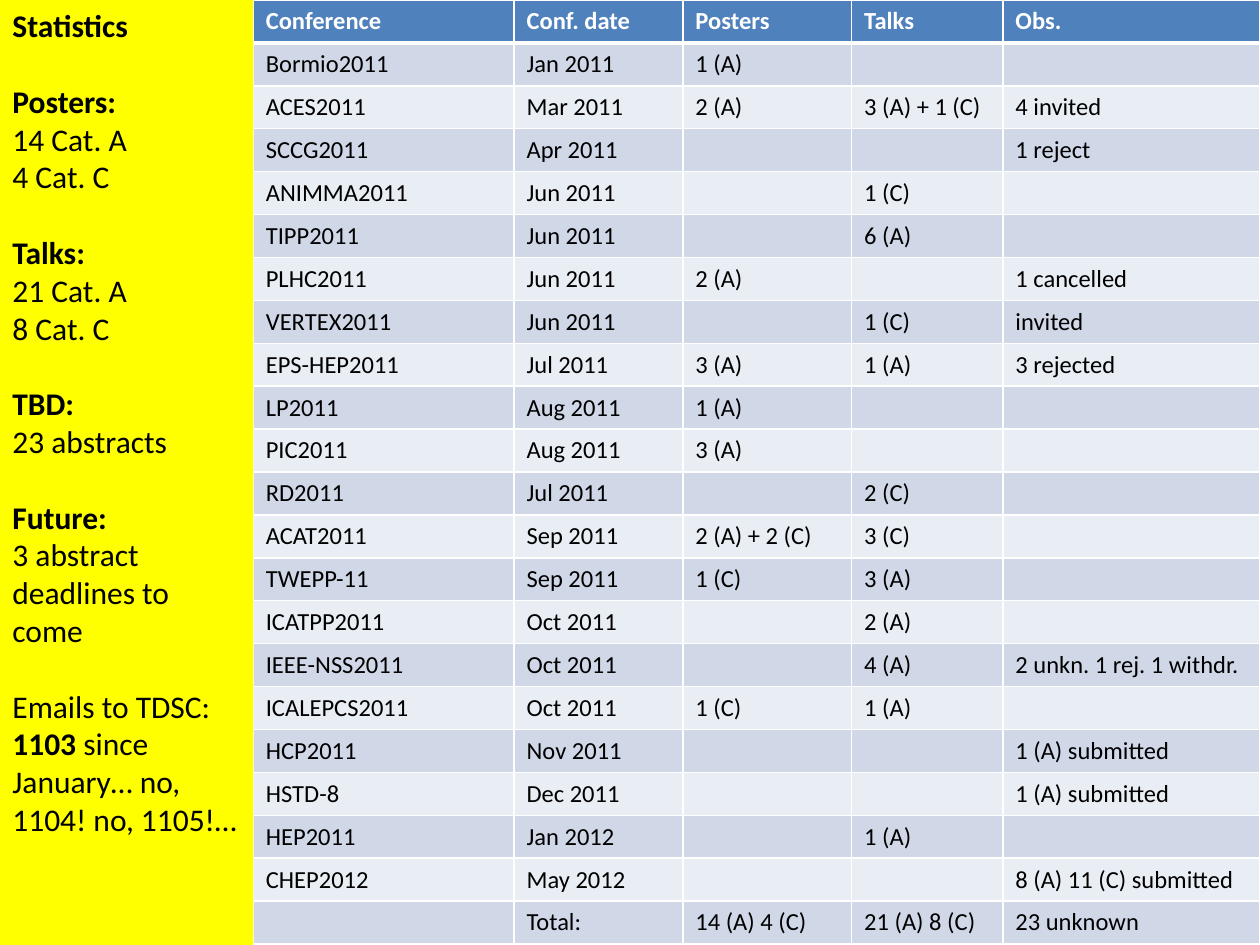
import pptx
import pptx.util
import pptx.dml.color
import pptx.enum.shapes
import pptx.enum.text
import pptx.oxml.ns
from lxml import etree

Inches = pptx.util.Inches
Pt = pptx.util.Pt

SIDEBAR_WIDTH = 2.01
COLUMN_WIDTHS = [2.07, 1.34, 1.34, 1.2, 2.04]
HEADER = ("Conference", "Conf. date", "Posters", "Talks", "Obs.")
CONFERENCES = [
    ("Bormio2011", "Jan 2011", "1 (A)", "", ""),
    ("ACES2011", "Mar 2011", "2 (A)", "3 (A) + 1 (C)", "4 invited"),
    ("SCCG2011", "Apr 2011", "", "", "1 reject"),
    ("ANIMMA2011", "Jun 2011", "", "1 (C)", ""),
    ("TIPP2011", "Jun 2011", "", "6 (A)", ""),
    ("PLHC2011", "Jun 2011", "2 (A)", "", "1 cancelled"),
    ("VERTEX2011", "Jun 2011", "", "1 (C)", "invited"),
    ("EPS-HEP2011", "Jul 2011", "3 (A)", "1 (A)", "3 rejected"),
    ("LP2011", "Aug 2011", "1 (A)", "", ""),
    ("PIC2011", "Aug 2011", "3 (A)", "", ""),
    ("RD2011", "Jul 2011", "", "2 (C)", ""),
    ("ACAT2011", "Sep 2011", "2 (A) + 2 (C)", "3 (C)", ""),
    ("TWEPP-11", "Sep 2011", "1 (C)", "3 (A)", ""),
    ("ICATPP2011", "Oct 2011", "", "2 (A)", ""),
    ("IEEE-NSS2011", "Oct 2011", "", "4 (A)", "2 unkn. 1 rej. 1 withdr."),
    ("ICALEPCS2011", "Oct 2011", "1 (C)", "1 (A)", ""),
    ("HCP2011", "Nov 2011", "", "", "1 (A) submitted"),
    ("HSTD-8", "Dec 2011", "", "", "1 (A) submitted"),
    ("HEP2011", "Jan 2012", "", "1 (A)", ""),
    ("CHEP2012", "May 2012", "", "", "8 (A) 11 (C) submitted"),
    ("", "Total:", "14 (A) 4 (C)", "21 (A) 8 (C)", "23 unknown"),
]
STATISTICS = [
    [[("Statistics", True)]],
    [[("Posters:", True)], [("14 Cat. A", False)], [("4 Cat. C", False)]],
    [[("Talks:", True)], [("21 Cat. A", False)], [("8 Cat. C", False)]],
    [[("TBD:", True)], [("23 abstracts", False)]],
    [[("Future:", True)], [("3 abstract deadlines to come", False)]],
    [[("Emails to TDSC:", False)],
     [("1103", True), (" since January… no, 1104! no, 1105!…", False)]],
]


def rgb(value):
    return pptx.dml.color.RGBColor.from_string(value)


def set_font(font, size, color, bold=None):
    font.name = "Calibri"
    font.size = Pt(size)
    font.color.rgb = rgb(color)
    font.bold = bold


def set_borders(cell, top, bottom):
    tcPr = cell._tc.get_or_add_tcPr()
    for side, width in (("L", 1), ("R", 1), ("T", top), ("B", bottom)):
        ln = etree.SubElement(tcPr, pptx.oxml.ns.qn("a:ln" + side), w=str(Pt(width)))
        fill = etree.SubElement(ln, pptx.oxml.ns.qn("a:solidFill"))
        etree.SubElement(fill, pptx.oxml.ns.qn("a:srgbClr"), val="FFFFFF")


def add_conferences(s):
    rows = [HEADER] + CONFERENCES
    table = s.shapes.add_table(
        len(rows), len(HEADER), Inches(SIDEBAR_WIDTH), 0,
        Inches(sum(COLUMN_WIDTHS)), Inches(7.5)).table
    for column, width in zip(table.columns, COLUMN_WIDTHS):
        column.width = Inches(width)
    for i, values in enumerate(rows):
        table.rows[i].height = Inches(7.5 / len(rows))
        for j, value in enumerate(values):
            cell = table.cell(i, j)
            cell.margin_top = cell.margin_bottom = 0
            cell.vertical_anchor = pptx.enum.text.MSO_ANCHOR.MIDDLE
            set_borders(cell, 3 if i == 1 else 1, 3 if i == 0 else 1)
            cell.fill.solid()
            cell.fill.fore_color.rgb = rgb(
                "4F81BD" if i == 0 else "D0D8E8" if i % 2 else "E9EDF4")
            cell.text = value
            set_font(cell.text_frame.paragraphs[0].font, 14,
                     "FFFFFF" if i == 0 else "000000", i == 0)


def add_statistics(s):
    sp = s.shapes.add_shape(pptx.enum.shapes.MSO_SHAPE.RECTANGLE, 0, 0,
                            Inches(SIDEBAR_WIDTH), Inches(7.5))
    sp.shadow.inherit = False
    sp.fill.solid()
    sp.fill.fore_color.rgb = rgb("FFFF00")
    sp.line.fill.background()
    tf = sp.text_frame
    tf.word_wrap = True
    tf.vertical_anchor = pptx.enum.text.MSO_ANCHOR.TOP
    p = tf.paragraphs[0]
    for i, group in enumerate(STATISTICS):
        for j, runs in enumerate(group):
            if i or j:
                p = tf.add_paragraph()
            p.alignment = pptx.enum.text.PP_ALIGN.LEFT
            if i and j == 0:
                p.space_before = Pt(21.6)
            set_font(p.font, 18, "000000")
            for text, bold in runs:
                r = p.add_run()
                r.text = text
                r.font.bold = bold


def main():
    prs = pptx.Presentation()
    prs.slide_width = Inches(10)
    prs.slide_height = Inches(7.5)
    s = prs.slides.add_slide(prs.slide_layouts[6])
    add_conferences(s)
    add_statistics(s)
    prs.save("out.pptx")


if __name__ == "__main__":
    main()
